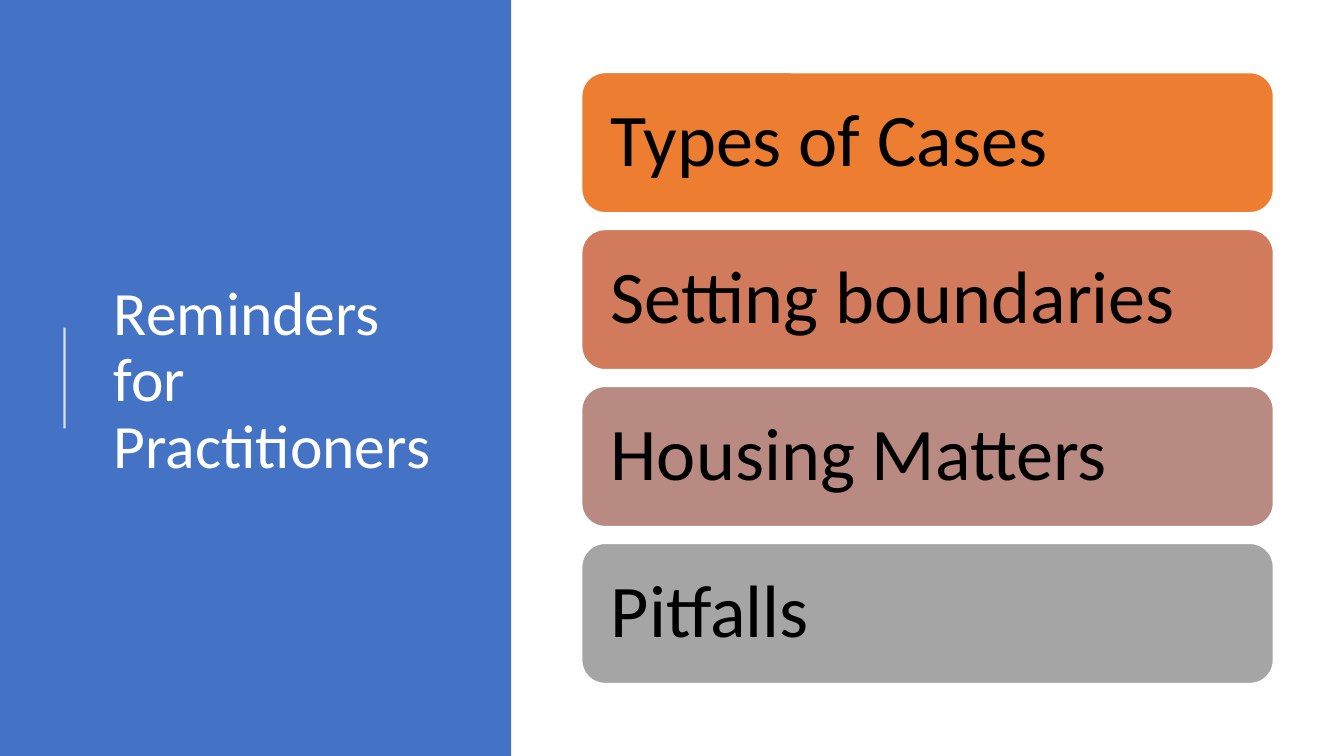
from dataclasses import dataclass

from lxml import etree
from pptx import Presentation
from pptx.dml.color import RGBColor
from pptx.enum.shapes import MSO_CONNECTOR, MSO_SHAPE
from pptx.enum.text import MSO_ANCHOR, MSO_AUTO_SIZE, PP_ALIGN
from pptx.oxml.ns import qn
from pptx.util import Inches, Pt

RECT, ROUND = MSO_SHAPE.RECTANGLE, MSO_SHAPE.ROUNDED_RECTANGLE
STRAIGHT = MSO_CONNECTOR.STRAIGHT
MIDDLE, LEFT, NO_FIT = MSO_ANCHOR.MIDDLE, PP_ALIGN.LEFT, MSO_AUTO_SIZE.NONE
TITLE_ONLY = 5


@dataclass(frozen=True)
class Theme:
    font: str = "Calibri"
    panel: str = "4472C4"
    light: str = "FFFFFF"
    dark: str = "000000"
    title: int = 44
    label: int = 53


@dataclass(frozen=True)
class Box:
    left: float
    top: float
    width: float
    height: float

    def emu(self) -> list:
        return [Inches(n) for n in (self.left, self.top, self.width, self.height)]


@dataclass(frozen=True)
class Bar:
    text: str
    fill: str


THEME = Theme()
PANEL = Box(0, 0, 5.07, 7.5)
TITLE = Box(1.03, 0.78, 3.69, 6.02)
FIRST = Box(5.77, 0.72, 6.86, 1.39)
STEP = 1.557
INSET = 0.22
BARS = [
    Bar("Types of Cases", "ED7D31"),
    Bar("Setting boundaries", "D17B5C"),
    Bar("Housing Matters", "B98A82"),
    Bar("Pitfalls", "A5A5A5"),
]


def apply(target, values: dict) -> None:
    for name, value in values.items():
        setattr(target, name, value)


def write(shape, text: str, size: int, color: str, inset: dict) -> None:
    frame = shape.text_frame
    frame.text = text
    apply(frame, {"word_wrap": True, "auto_size": NO_FIT,
                  "vertical_anchor": MIDDLE, **inset})
    line = frame.paragraphs[0]
    apply(line, {"alignment": LEFT, "line_spacing": 0.9})
    font = line.runs[0].font
    apply(font, {"name": THEME.font, "size": Pt(size)})
    font.color.rgb = RGBColor.from_string(color)


def add_block(slide, kind, box: Box, fill: str):
    shape = slide.shapes.add_shape(kind, *box.emu())
    shape.shadow.inherit = False
    shape.fill.solid()
    shape.fill.fore_color.rgb = RGBColor.from_string(fill)
    return shape


def add_panel(slide) -> None:
    """Draw the side panel behind the title."""
    panel = add_block(slide, RECT, PANEL, THEME.panel)
    panel.line.fill.background()
    slide.shapes.title._element.addprevious(panel._element)


def add_title(slide) -> None:
    title = slide.shapes.title
    apply(title, dict(zip(("left", "top", "width", "height"), TITLE.emu())))
    write(title, "Reminders for Practitioners", THEME.title, THEME.light, {})


def add_rule(slide) -> None:
    """Draw the thin, slightly see-through line beside the title."""
    ends = [Inches(n) for n in (0.64, 4.25, 0.64, 3.25)]
    rule = slide.shapes.add_connector(STRAIGHT, *ends)
    rule.line.width = Pt(1.5)
    rule.line.color.rgb = RGBColor.from_string(THEME.light)
    props = rule._element.spPr
    color = next(props.iter(qn("a:srgbClr")))
    etree.SubElement(color, qn("a:alpha"), val="80000")
    etree.SubElement(props, qn("a:effectLst"))


def add_bar(slide, bar: Bar, row: int) -> None:
    box = Box(FIRST.left, FIRST.top + row * STEP, FIRST.width, FIRST.height)
    shape = add_block(slide, ROUND, box, bar.fill)
    shape.line.width = Pt(1)
    shape.line.color.rgb = RGBColor.from_string(THEME.light)
    sides = ("left", "top", "right", "bottom")
    inset = {f"margin_{side}": Inches(INSET) for side in sides}
    write(shape, bar.text, THEME.label, THEME.dark, inset)


def main() -> None:
    deck = Presentation()
    apply(deck, {"slide_width": Inches(13.33), "slide_height": Inches(7.5)})
    slide = deck.slides.add_slide(deck.slide_layouts[TITLE_ONLY])
    add_panel(slide)
    add_title(slide)
    add_rule(slide)
    for row, bar in enumerate(BARS):
        add_bar(slide, bar, row)
    deck.save("out.pptx")


if __name__ == "__main__":
    main()
